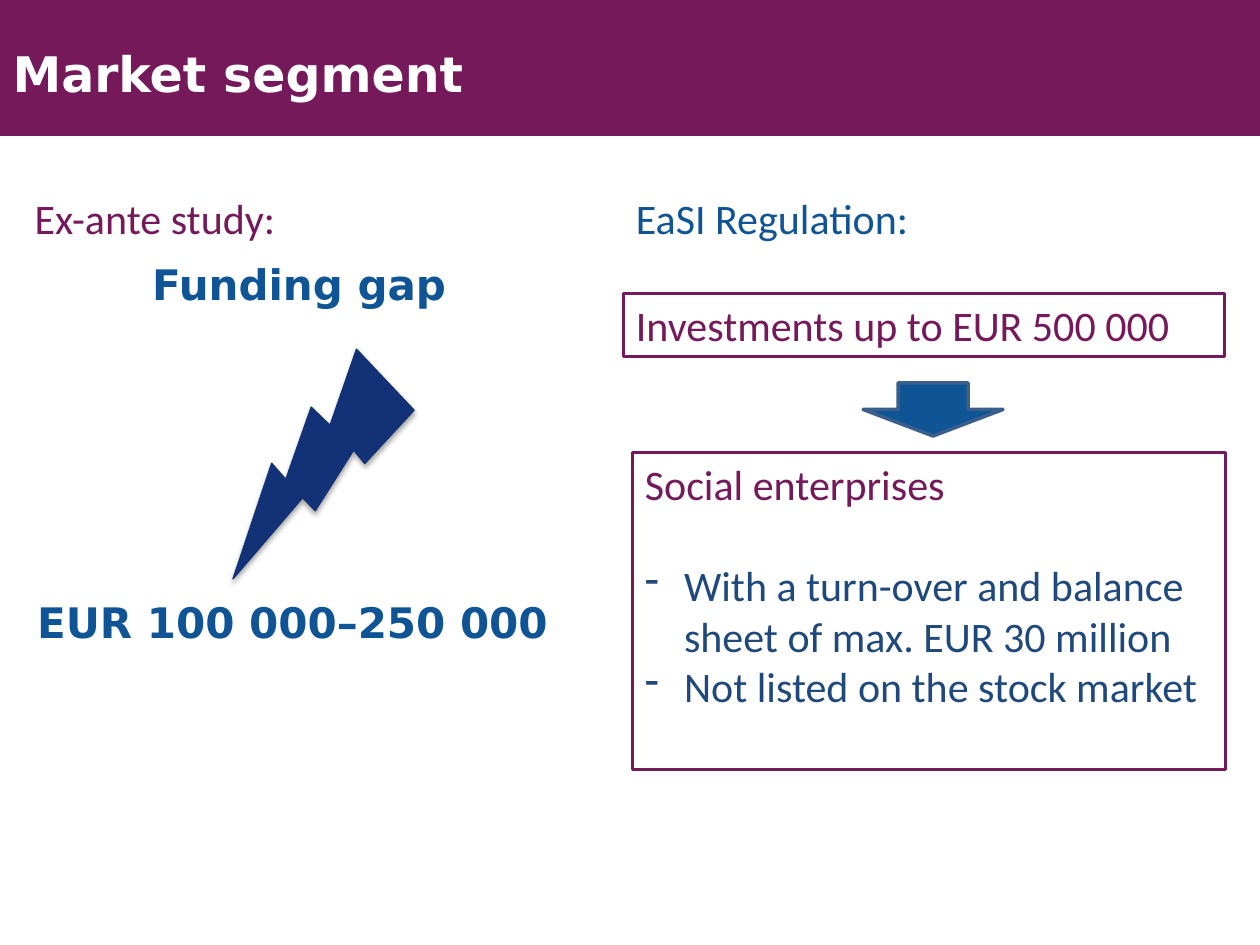
from lxml import etree
from pptx import Presentation
from pptx.dml.color import RGBColor
from pptx.enum.shapes import MSO_SHAPE as Preset
from pptx.enum.text import MSO_ANCHOR as Anchor, MSO_AUTO_SIZE as AutoSize, PP_ALIGN as Align
from pptx.oxml import parse_xml
from pptx.oxml.ns import nsdecls, qn
from pptx.util import Cm, Pt

COLORS = {"plum": "75195B", "blue": "0F5494", "navy": "133176",
          "slate": "1F497D", "edge": "3A5F8C", "white": "FFFFFF"}

HEADING = {"name": "DejaVu Sans", "size": Pt(24), "bold": True}
BODY = {"name": "Calibri", "size": Pt(24), "bold": False}

TITLE = ("Market segment", (0, 0.74, 25.1, 1.45))
LABELS = [
    ("EUR 100 000–250 000", (0.5, 11.91, 11.4, 1.27), HEADING, "blue"),
    ("Funding gap", (2.82, 5.08, 7.39, 1.27), HEADING, "blue"),
    ("Ex-ante study:", (0.45, 3.76, 6.02, 1.27), BODY, "plum"),
    ("EaSI Regulation:", (12.57, 3.76, 11.71, 1.27), BODY, "blue"),
]
BAND = (Preset.RECTANGLE, (0, 0, 25.4, 2.74), "plum", None, 0)
ARROW = (Preset.DOWN_ARROW, (17.4, 7.72, 2.82, 1.07), "blue", "edge", 2)
BOLT = (Preset.LIGHTNING_BOLT, (4.42, 7.04, 3.81, 4.42), "navy", "navy", 0.75)
BOLT_ROTATION = 74.7
INVESTMENT_BOX = (Preset.RECTANGLE, (12.57, 5.92, 12.12, 1.27), None, "plum", 1.5)
INVESTMENT_TEXT = "Investments up to EUR 500 000"
ENTERPRISE_BOX = (Preset.RECTANGLE, (12.75, 9.12, 11.96, 6.4), None, "plum", 1.5)
ENTERPRISE_HEADING = "Social enterprises"
ENTERPRISE_BULLETS = [
    "With a turn-over and balance sheet of max. EUR 30 million",
    "Not listed on the stock market",
]


def color(name):
    return RGBColor.from_string(COLORS[name])


def apply(target, values):
    for name, value in values.items():
        setattr(target, name, value)


def place(shape, box):
    apply(shape, dict(zip(("left", "top", "width", "height"), map(Cm, box))))


def add_shape(slide, preset, box, fill, line, line_width):
    shape = slide.shapes.add_shape(preset, *map(Cm, box))
    shape.shadow.inherit = False
    if fill:
        shape.fill.solid()
        shape.fill.fore_color.rgb = color(fill)
    else:
        shape.fill.background()
    if line:
        shape.line.color.rgb = color(line)
        shape.line.width = Pt(line_width)
    else:
        shape.line.fill.background()
    return shape


def write(paragraph, text, font, color_name):
    paragraph.text = text
    paragraph.alignment = Align.LEFT
    apply(paragraph.font, font)
    paragraph.font.color.rgb = color(color_name)


def set_frame(shape, anchor=Anchor.TOP):
    frame = shape.text_frame
    apply(frame, {"word_wrap": True, "auto_size": AutoSize.NONE, "vertical_anchor": anchor})
    return frame


def add_dash(paragraph):
    properties = paragraph._p.get_or_add_pPr()
    indent = Cm(0.79)
    properties.set("marL", str(indent))
    properties.set("indent", str(-indent))
    etree.SubElement(properties, qn("a:buChar")).set("char", "-")


def add_soft_shadow(shape):
    effects = shape._element.spPr.find(qn("a:effectLst"))
    effects.append(parse_xml(
        f'<a:outerShdw {nsdecls("a")} blurRad="{Pt(3.1)}" dist="{Pt(1.8)}" dir="5400000" '
        'rotWithShape="0"><a:srgbClr val="000000"><a:alpha val="35000"/></a:srgbClr>'
        '</a:outerShdw>'))


def main():
    presentation = Presentation()
    apply(presentation, {"slide_width": Cm(25.4), "slide_height": Cm(19.05)})
    slide = presentation.slides.add_slide(presentation.slide_layouts[5])

    band = add_shape(slide, *BAND)
    slide.shapes._spTree.insert(2, band._element)
    text, box = TITLE
    title = slide.shapes.title
    place(title, box)
    write(set_frame(title, Anchor.MIDDLE).paragraphs[0], text,
          {**HEADING, "size": Pt(28)}, "white")

    investments = add_shape(slide, *INVESTMENT_BOX)
    write(set_frame(investments).paragraphs[0], INVESTMENT_TEXT, BODY, "plum")
    add_shape(slide, *ARROW)

    frame = set_frame(add_shape(slide, *ENTERPRISE_BOX))
    heading = frame.paragraphs[0]
    write(heading, ENTERPRISE_HEADING, BODY, "plum")
    heading.space_after = Pt(29)
    for text in ENTERPRISE_BULLETS:
        paragraph = frame.add_paragraph()
        add_dash(paragraph)
        write(paragraph, text, BODY, "slate")

    bolt = add_shape(slide, *BOLT)
    bolt.rotation = BOLT_ROTATION
    add_soft_shadow(bolt)

    for text, box, font, color_name in LABELS:
        label = slide.shapes.add_textbox(*map(Cm, box))
        write(set_frame(label).paragraphs[0], text, font, color_name)

    presentation.save("out.pptx")


if __name__ == "__main__":
    main()
